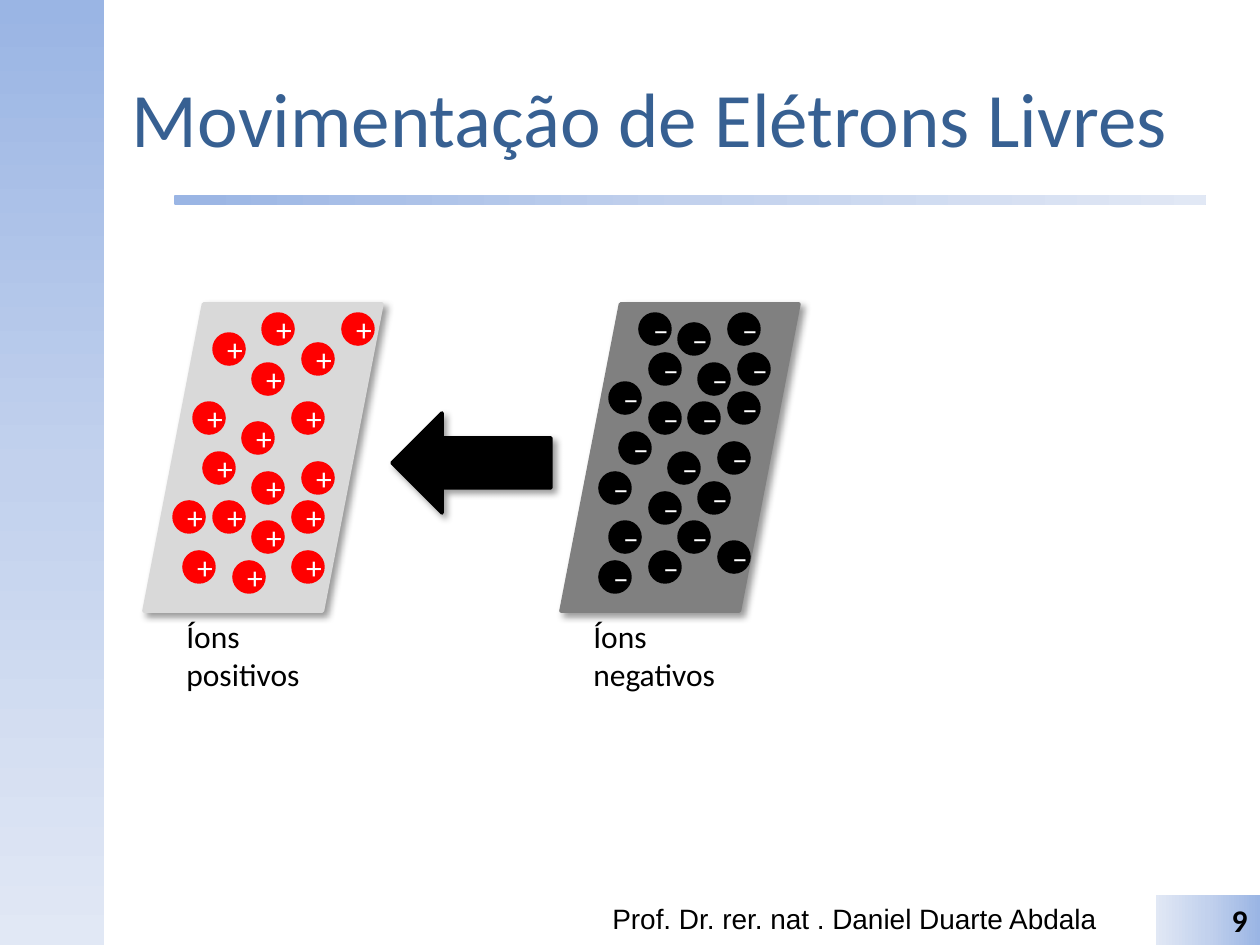
import pptx
import pptx.util
import pptx.oxml
import pptx.oxml.ns
import pptx.dml.color
import pptx.enum.shapes
import pptx.enum.text

PX = 914400 // 126
SHAPE = pptx.enum.shapes.MSO_SHAPE
ALIGN = pptx.enum.text.PP_ALIGN
MIDDLE = pptx.enum.text.MSO_ANCHOR.MIDDLE
COLORS = {"title": "376092", "red": "FF0000", "black": "000000", "white": "FFFFFF",
          "light": "D9D9D9", "dark": "808080"}
FADE = {0: "9AB5E4", 50: "C2D1ED", 100: "E1E8F5"}
NS = pptx.oxml.ns.nsdecls("a")


def draw(parent, kind, box, color=None, angle=None, shade=False):
    """Add a preset shape with a plain fill, or a fade when an angle is given."""
    shape = parent.add_shape(kind, *(n * PX for n in box))
    shape.shadow.inherit = False
    props = shape.fill._xPr
    if angle is None:
        tone = pptx.dml.color.RGBColor.from_string(COLORS[color])
        shape.fill.solid()
        shape.fill.fore_color.rgb = tone
        shape.line.color.rgb = tone
        shape.line.width = pptx.util.Pt(2)
    else:
        stops = "".join(f'<a:gs pos="{pos * 1000}"><a:srgbClr val="{tone}"/></a:gs>'
                        for pos, tone in FADE.items())
        grad = pptx.oxml.parse_xml(f'<a:gradFill {NS} rotWithShape="1"><a:gsLst>{stops}</a:gsLst>'
                                   f'<a:lin ang="{angle * 60000}" scaled="0"/></a:gradFill>')
        props.find(pptx.oxml.ns.qn("a:prstGeom")).addnext(grad)
        shape.line.fill.background()
    if shade:
        props.find(pptx.oxml.ns.qn("a:effectLst")).append(pptx.oxml.parse_xml(
            f'<a:outerShdw {NS} blurRad="50800" dist="38100" dir="2700000" algn="tl" '
            'rotWithShape="0"><a:srgbClr val="000000"><a:alpha val="40000"/></a:srgbClr>'
            '</a:outerShdw>'))
    return shape


def write(shape, lines, color, align=ALIGN.LEFT, **form):
    """Put lines of text into a shape; form overrides the font values."""
    frame = shape.text_frame
    frame.text = "\n".join(lines)
    for para in frame.paragraphs:
        para.alignment = align
        font = para.runs[0].font
        font.color.rgb = pptx.dml.color.RGBColor.from_string(COLORS[color])
        for key, val in ({"name": "Calibri", "size": pptx.util.Pt(18)} | form).items():
            setattr(font, key, val)
    return frame


deck = pptx.Presentation()
deck.slide_width, deck.slide_height = 1260 * PX, 945 * PX
slide = deck.slides.add_slide(deck.slide_layouts[5])
shapes = slide.shapes

# Side band and rule under the title
draw(shapes, SHAPE.RECTANGLE, (0, 0, 104, 945), angle=90)
draw(shapes, SHAPE.ROUNDED_RECTANGLE, (174, 195, 1032, 10), angle=0)

# Title
title = shapes.title
for key, val in {"left": 104, "top": 38, "width": 1092, "height": 158}.items():
    setattr(title, key, val * PX)
frame = write(title, ["Movimentação de Elétrons Livres"], "title", ALIGN.CENTER,
              size=pptx.util.Pt(44))
frame.vertical_anchor = MIDDLE

# Footer and page number
foot = shapes.add_textbox(*(n * PX for n in (600, 895, 528, 50)))
frame = write(foot, ["Prof. Dr. rer. nat . Daniel Duarte Abdala"], "black",
              name="Arial", size=pptx.util.Pt(16))
frame.word_wrap = True
page = draw(shapes, SHAPE.RECTANGLE, (1156, 895, 104, 50), angle=180)
write(page, ["9"], "black", ALIGN.RIGHT, bold=True).vertical_anchor = MIDDLE

# Ion places as (column, row) steps on a fine grid
STEP = 9.92
plus = [(8, 5), (4, 2), (13, 3), (12, 9), (9, 0), (2, 9), (7, 11), (13, 15), (17, 0),
        (3, 14), (8, 16), (12, 19), (8, 21), (12, 24), (6, 25), (4, 19), (1, 24), (0, 19)]
minus = [(5, 4), (4, 0), (8, 1), (10, 5), (13, 0), (14, 4), (1, 7), (5, 9), (9, 9),
         (13, 8), (2, 12), (0, 16), (7, 14), (1, 21), (12, 13), (10, 17), (5, 18),
         (8, 21), (12, 23), (5, 24), (0, 25)]

# Plates with their ions and labels: plate x, tone, ion x, tone, sign, places, label
plates = [
    (144, "light", 174, "red", "+", plus, (174, 140), "positivos"),
    (561, "dark", 600, "black", "–", minus, (581, 149), "negativos"),
]
group = shapes.add_group_shape().shapes
for left, tone, start, color, sign, spots, (edge, width), word in plates:
    draw(group, SHAPE.PARALLELOGRAM, (left, 304, 238, 307), tone, shade=True)
    for col, row in spots:
        box = (start + round(col * STEP), 314 + round(row * STEP), 30, 30)
        ion = draw(group, SHAPE.OVAL, box, color)
        write(ion, [sign], "white", ALIGN.CENTER).vertical_anchor = MIDDLE
    label = group.add_textbox(*(n * PX for n in (edge, 611, width, 89)))
    frame = write(label, ["Íons", word], "black")
    frame.word_wrap = False
    frame.auto_size = pptx.enum.text.MSO_AUTO_SIZE.SHAPE_TO_FIT_TEXT

# Arrow from the negative to the positive plate
arrow = draw(group, SHAPE.RIGHT_ARROW, (392, 413, 159, 100), "black", shade=True)
arrow.rotation = 180

deck.save("out.pptx")
